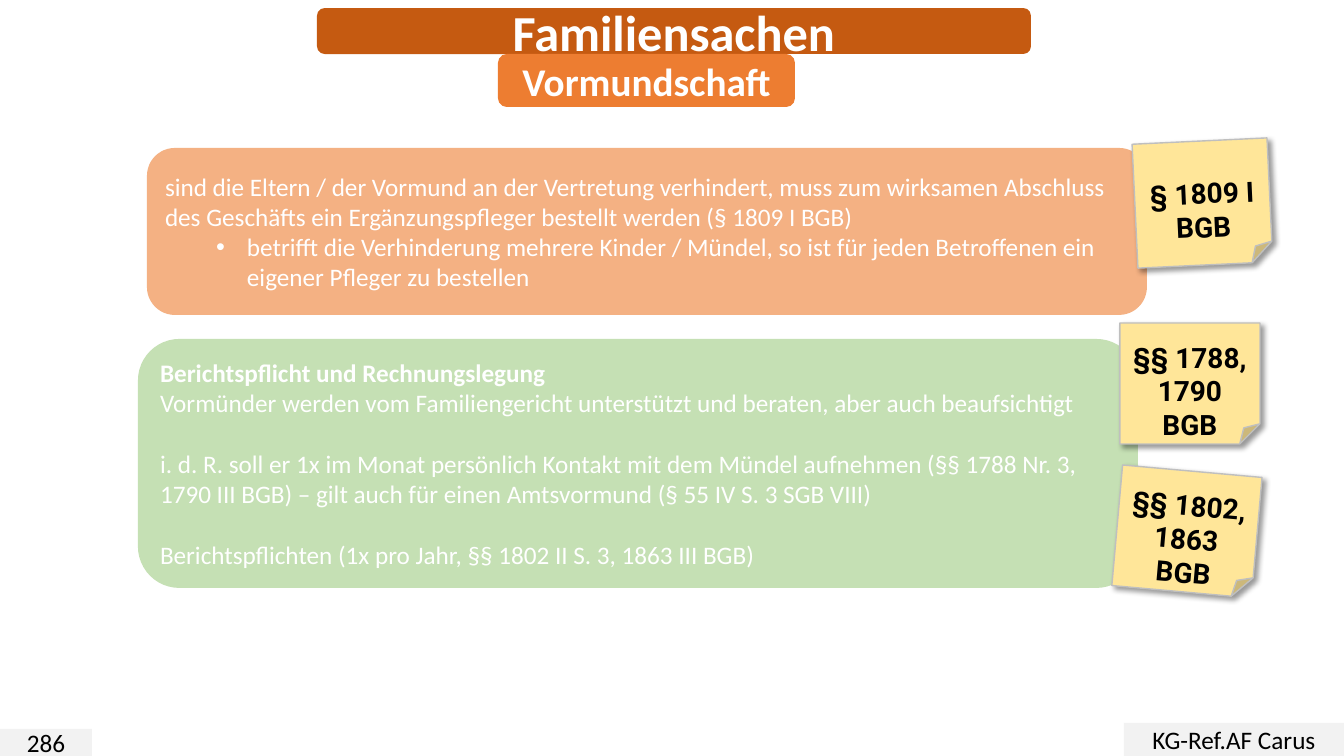
from lxml.etree import SubElement
from pptx import Presentation
from pptx.dml.color import RGBColor
from pptx.enum.shapes import MSO_SHAPE as SHAPE
from pptx.enum.text import MSO_ANCHOR, PP_ALIGN
from pptx.oxml.ns import qn
from pptx.util import Pt

PX = 914400 / 100.8
SLIDE = (1344, 756)
COLORS = {
    "title": "C55A11", "subtitle": "ED7D31", "footer": "F2F2F2",
    "deputy": "F4B183", "duties": "C5E0B4", "note": "FFE699",
    "edge": "BFBFBF", "light": "FFFFFF", "dark": "000000",
}
FORMATS = {
    "title": {"name": "Calibri", "size": Pt(36), "bold": True},
    "subtitle": {"name": "Calibri", "size": Pt(28), "bold": True},
    "body": {"name": "Calibri", "size": Pt(18), "bold": False},
    "heading": {"name": "Calibri", "size": Pt(18), "bold": True},
    "note": {"name": "Roboto", "size": Pt(20), "bold": True},
}
GAP = Pt(22)  # one line of body text
NOTE_TOP = 39  # keeps the upper part of a note free

# box (left, top, width, height), fill, text, format, text colour
LABELS = [
    (SHAPE.ROUNDED_RECTANGLE, (317, 8, 714, 46), "title", "Familiensachen", "title", "light"),
    (SHAPE.RECTANGLE, (0, 729, 92, 27), "footer", "286", "body", "dark"),
    (SHAPE.RECTANGLE, (1124, 723, 220, 33), "footer", "KG-Ref.AF Carus", "body", "dark"),
    (SHAPE.ROUNDED_RECTANGLE, (498, 54, 297, 53), "subtitle", "Vormundschaft", "subtitle", "light"),
]
# box, fill, paragraphs (text, format, space before, bulleted)
PANELS = [
    ((147, 148, 1000, 167), "deputy", [
        ("sind die Eltern / der Vormund an der Vertretung verhindert, muss zum wirksamen "
         "Abschluss des Geschäfts ein Ergänzungspfleger bestellt werden (§ 1809 I BGB)",
         "body", 0, False),
        ("betrifft die Verhinderung mehrere Kinder / Mündel, so ist für jeden Betroffenen "
         "ein eigener Pfleger zu bestellen", "body", 0, True),
    ]),
    ((138, 339, 1000, 249), "duties", [
        ("Berichtspflicht und Rechnungslegung", "heading", 0, False),
        ("Vormünder werden vom Familiengericht unterstützt und beraten, aber auch "
         "beaufsichtigt", "body", 0, False),
        ("i. d. R. soll er 1x im Monat persönlich Kontakt mit dem Mündel aufnehmen "
         "(§§ 1788 Nr. 3, 1790 III BGB) – gilt auch für einen Amtsvormund "
         "(§ 55 IV S. 3 SGB VIII)", "body", GAP, False),
        ("Berichtspflichten (1x pro Jahr, §§ 1802 II S. 3, 1863 III BGB)", "body", GAP, False),
    ]),
]
# box, rotation, lines
NOTES = [
    ((1135, 141, 135, 124), 357.3, ["§ 1809 I", "BGB"]),
    ((1120, 323, 140, 121), 0, ["§§ 1788,", "1790", "BGB"]),
    ((1117, 471, 140, 121), 5.1, ["§§ 1802,", "1863", "BGB"]),
]


def px(n):
    return round(n * PX)


def rgb(name):
    return RGBColor.from_string(COLORS[name])


def add_box(s, kind, box, fill):
    sp = s.shapes.add_shape(kind, *map(px, box))
    sp.shadow.inherit = False
    sp.fill.solid()
    sp.fill.fore_color.rgb = rgb(fill)
    sp.line.fill.background()
    sp.text_frame.word_wrap = True
    sp.text_frame.vertical_anchor = MSO_ANCHOR.MIDDLE
    return sp


def write(sp, paragraphs, color, align):
    tf = sp.text_frame
    for i, (text, fmt, before, bulleted) in enumerate(paragraphs):
        p = tf.add_paragraph() if i else tf.paragraphs[0]
        p.alignment = align
        if before:
            p.space_before = before
        if bulleted:
            add_bullet(p)
        r = p.add_run()
        r.text = text
        r.font.color.rgb = rgb(color)
        for key, value in FORMATS[fmt].items():
            setattr(r.font, key, value)


def add_bullet(p):
    p.level = 1
    pPr = p._p.get_or_add_pPr()
    pPr.set("marL", str(px(82)))
    pPr.set("indent", str(px(-31)))
    SubElement(pPr, qn("a:buFont"), typeface="Arial")
    SubElement(pPr, qn("a:buChar"), char="•")


def add_shadow(sp):
    effects = sp._element.spPr.find(qn("a:effectLst"))
    shadow = SubElement(effects, qn("a:outerShdw"), blurRad=str(Pt(4)), dist=str(Pt(3)),
                        dir=str(45 * 60000), algn="tl", rotWithShape="0")
    color = SubElement(shadow, qn("a:srgbClr"), val=COLORS["dark"])
    SubElement(color, qn("a:alpha"), val="40000")


def main():
    prs = Presentation()
    prs.slide_width, prs.slide_height = map(px, SLIDE)
    s = prs.slides.add_slide(prs.slide_layouts[6])
    for kind, box, fill, text, fmt, color in LABELS:
        sp = add_box(s, kind, box, fill)
        write(sp, [(text, fmt, 0, False)], color, PP_ALIGN.CENTER)
    for box, fill, paragraphs in PANELS:
        sp = add_box(s, SHAPE.ROUNDED_RECTANGLE, box, fill)
        write(sp, paragraphs, "light", PP_ALIGN.LEFT)
    for box, rotation, lines in NOTES:
        sp = add_box(s, SHAPE.FOLDED_CORNER, box, "note")
        sp.rotation = rotation
        sp.line.color.rgb = rgb("edge")
        sp.line.width = Pt(1)
        add_shadow(sp)
        sp.text_frame.margin_top = px(NOTE_TOP)
        write(sp, [(line, "note", 0, False) for line in lines], "dark", PP_ALIGN.CENTER)
    prs.save("out.pptx")


if __name__ == "__main__":
    main()
